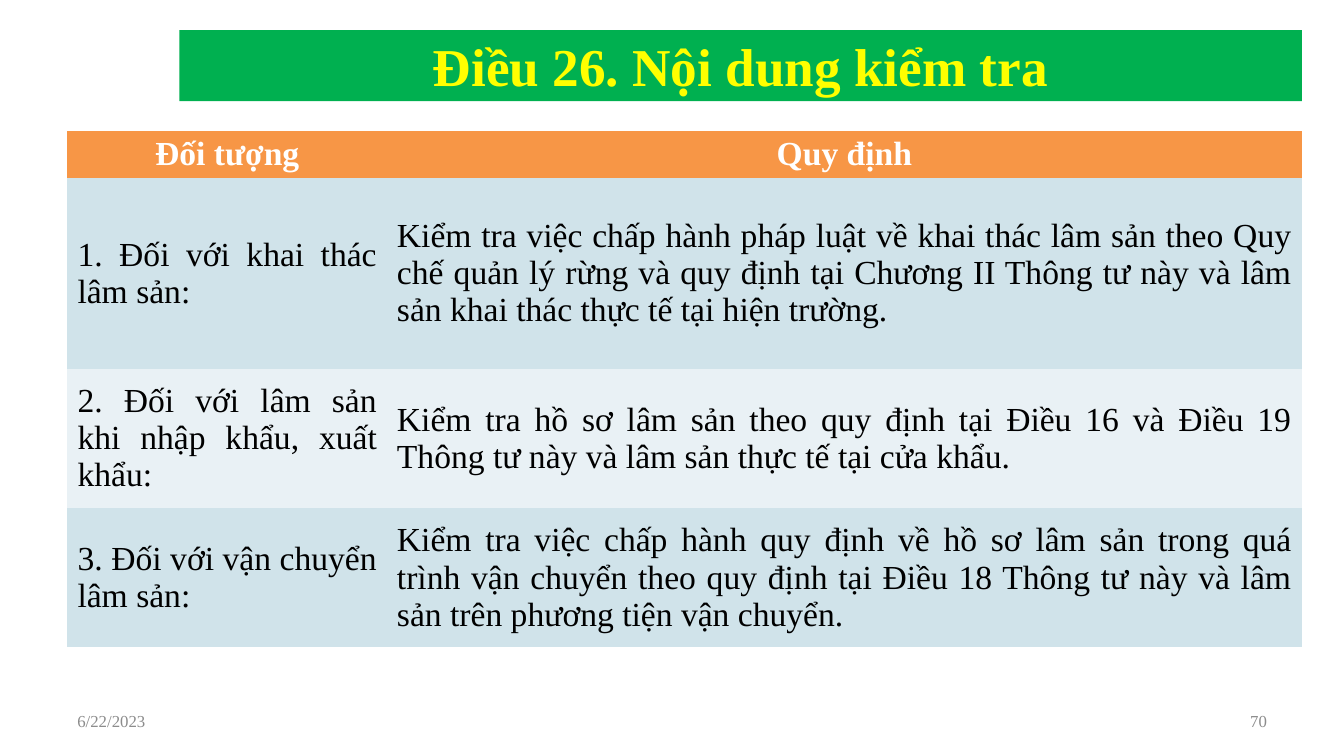
from dataclasses import dataclass

from pptx import Presentation
from pptx.dml.color import RGBColor as RGB
from pptx.enum.text import MSO_ANCHOR as Anchor, MSO_AUTO_SIZE as AutoSize, PP_ALIGN as Align
from pptx.oxml.ns import qn
from pptx.util import Cm, Pt

# Content
TITLE = "Điều 26. Nội dung kiểm tra"
HEADINGS = ("Đối tượng", "Quy định")
RULES = [
    ("1. Đối với khai thác lâm sản: ",
     "Kiểm tra việc chấp hành pháp luật về khai thác lâm sản theo Quy chế quản lý rừng "
     "và quy định tại Chương II Thông tư này và lâm sản khai thác thực tế tại hiện trường."),
    ("2. Đối với lâm sản khi nhập khẩu, xuất khẩu: ",
     "Kiểm tra hồ sơ lâm sản theo quy định tại Điều 16 và Điều 19 Thông tư này "
     "và lâm sản thực tế tại cửa khẩu."),
    ("3. Đối với vận chuyển lâm sản: ",
     "Kiểm tra việc chấp hành quy định về hồ sơ lâm sản trong quá trình vận chuyển "
     "theo quy định tại Điều 18 Thông tư này và lâm sản trên phương tiện vận chuyển."),
]
DATE, PAGE = "6/22/2023", "70"


@dataclass(frozen=True)
class Theme:
    font: str = "Times New Roman"
    title_size: int = 38
    body_size: int = 24
    footer_size: int = 12
    banner: RGB = RGB(0x00, 0xB0, 0x50)
    title: RGB = RGB(0xFF, 0xFF, 0x00)
    heading_fill: RGB = RGB(0xF7, 0x96, 0x46)
    heading: RGB = RGB(0xFF, 0xFF, 0xFF)
    body: RGB = RGB(0x00, 0x00, 0x00)
    bands: tuple = (RGB(0xD0, 0xE3, 0xEA), RGB(0xE9, 0xF1, 0xF5))
    footer: RGB = RGB(0x8C, 0x8C, 0x8C)


THEME = Theme()

# Layout
LEFT, RIGHT = Cm(1.7), Cm(32.81)
TABLE_TOP = Cm(3.3)
COLUMN_WIDTHS = (Cm(8.05), Cm(23.06))
ROW_HEIGHTS = (Cm(1.15), Cm(4.8), Cm(3.51), Cm(3.51))
FOOTER_TOP, FOOTER_WIDTH, FOOTER_HEIGHT = Cm(17.65), Cm(7.9), Cm(1.02)
PAGE_LEFT = Cm(24.28)
NO_STYLE_NO_GRID = "{2D5ABB26-0587-4C30-8999-92F81FD0307C}"


def write(frame, text, size, color, align, bold=False):
    frame.text = text
    frame.word_wrap = True
    paragraph = frame.paragraphs[0]
    paragraph.alignment = align
    font = paragraph.font
    font.name, font.size, font.bold = THEME.font, Pt(size), bold
    font.color.rgb = color


def add_banner(slide):
    banner = slide.shapes.title
    banner.left, banner.top = Cm(4.52), Cm(0.76)
    banner.width, banner.height = RIGHT - banner.left, Cm(1.79)
    banner.fill.solid()
    banner.fill.fore_color.rgb = THEME.banner
    frame = banner.text_frame
    write(frame, TITLE, THEME.title_size, THEME.title, Align.CENTER, True)
    frame.auto_size = AutoSize.NONE
    frame.vertical_anchor = Anchor.MIDDLE


def add_rules(slide):
    rows = [HEADINGS, *RULES]
    table = slide.shapes.add_table(len(rows), len(HEADINGS), LEFT, TABLE_TOP,
                                   sum(COLUMN_WIDTHS), sum(ROW_HEIGHTS)).table
    table._tbl.tblPr.find(qn("a:tableStyleId")).text = NO_STYLE_NO_GRID
    for column, width in zip(table.columns, COLUMN_WIDTHS):
        column.width = width
    for r, (texts, height) in enumerate(zip(rows, ROW_HEIGHTS)):
        table.rows[r].height = height
        is_heading = r == 0
        fill = THEME.heading_fill if is_heading else THEME.bands[(r - 1) % 2]
        color = THEME.heading if is_heading else THEME.body
        align = Align.CENTER if is_heading else Align.JUSTIFY
        for c, text in enumerate(texts):
            cell = table.cell(r, c)
            cell.fill.solid()
            cell.fill.fore_color.rgb = fill
            cell.vertical_anchor = Anchor.MIDDLE
            write(cell.text_frame, text, THEME.body_size, color, align, is_heading)


def add_footer(slide):
    for text, left, align in ((DATE, LEFT, Align.LEFT), (PAGE, PAGE_LEFT, Align.RIGHT)):
        frame = slide.shapes.add_textbox(left, FOOTER_TOP, FOOTER_WIDTH, FOOTER_HEIGHT).text_frame
        frame.vertical_anchor = Anchor.MIDDLE
        write(frame, text, THEME.footer_size, THEME.footer, align)


def main():
    deck = Presentation()
    deck.slide_width, deck.slide_height = Cm(33.87), Cm(19.05)
    slide = deck.slides.add_slide(deck.slide_layouts.get_by_name("Title Only"))
    add_banner(slide)
    add_rules(slide)
    add_footer(slide)
    deck.save("out.pptx")


if __name__ == "__main__":
    main()
